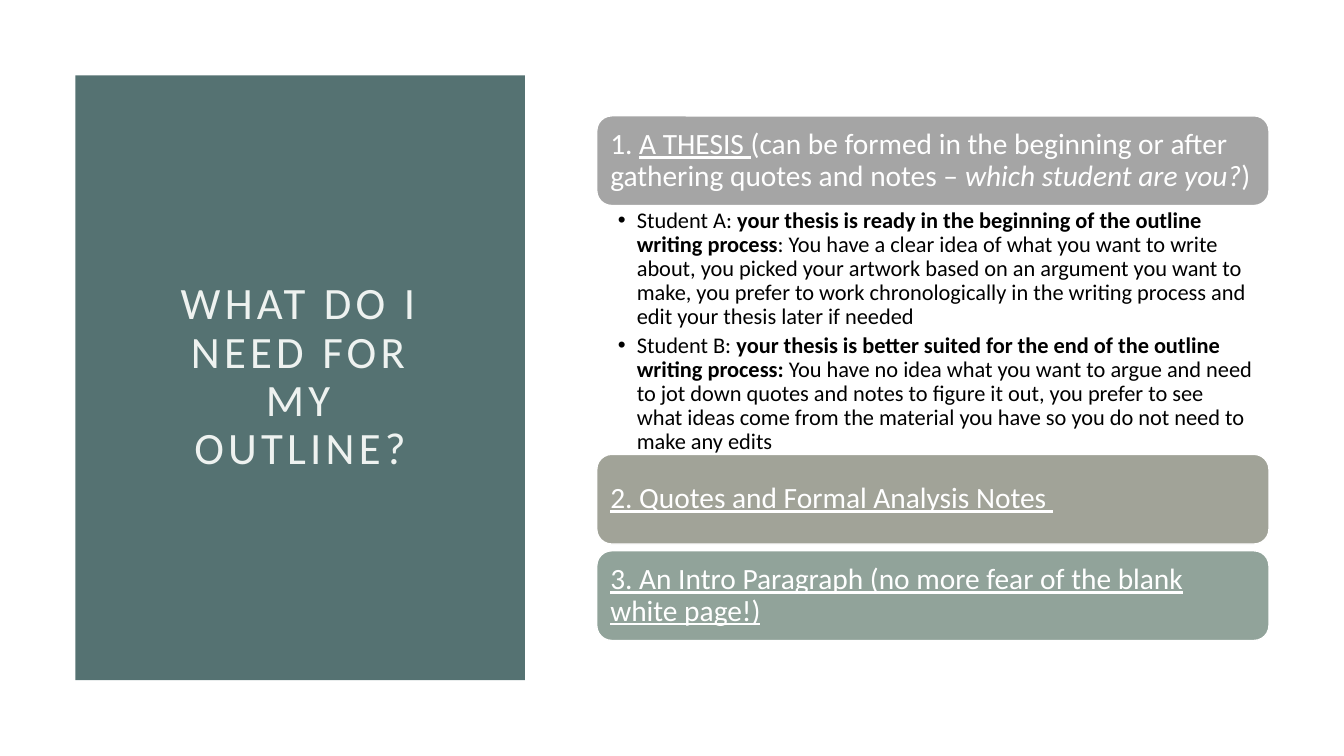
from dataclasses import dataclass

from lxml.etree import SubElement
from pptx import Presentation
from pptx.dml.color import RGBColor
from pptx.enum.shapes import MSO_SHAPE
from pptx.enum.text import MSO_ANCHOR, MSO_AUTO_SIZE, PP_ALIGN
from pptx.oxml.ns import qn
from pptx.util import Cm, Pt


@dataclass(frozen=True)
class Theme:
    font: str = "Calibri"
    panel: str = "557272"
    title: str = "EEF2F0"
    white: str = "FFFFFF"
    body: str = "000000"
    bars: tuple = ("A5A5A5", "A1A398", "91A39A")
    title_size: int = 32
    bar_size: int = 21
    body_size: int = 16


@dataclass(frozen=True)
class Box:
    left: float
    top: float
    width: float
    height: float

    def lengths(self):
        return [Cm(v) for v in (self.left, self.top, self.width, self.height)]

    def inset(self, margin):
        return Box(self.left + margin, self.top + margin,
                   self.width - 2 * margin, self.height - 2 * margin)


THEME = Theme()
TITLE = "WHAT DO I NEED FOR MY OUTLINE?"
UNDERLINE, ITALIC, BOLD = {"underline": True}, {"italic": True}, {"bold": True}

# Each step: heading spans, then bulleted paragraphs of spans
STEPS = [
    ([("1. ", {}), ("A THESIS ", UNDERLINE),
      ("(can be formed in the beginning or after gathering quotes and notes – ", {}),
      ("which student are you?", ITALIC), (")", {})],
     [[("Student A: ", {}),
       ("your thesis is ready in the beginning of the outline writing process", BOLD),
       (": You have a clear idea of what you want to write about, you picked your "
        "artwork based on an argument you want to make, you prefer to work "
        "chronologically in the writing process and edit your thesis later if needed", {})],
      [("Student B: ", {}),
       ("your thesis is better suited for the end of the outline writing process: ", BOLD),
       ("You have no idea what you want to argue and need to jot down quotes and notes "
        "to figure it out, you prefer to see what ideas come from the material you have "
        "so you do not need to make any edits", {})]]),
    ([("2. Quotes and Formal Analysis Notes ", UNDERLINE)], []),
    ([("3. An Intro Paragraph (no more fear of the blank white page!)", UNDERLINE)], []),
]


def apply(target, formats):
    for name, value in formats.items():
        setattr(target, name, value)


def add_spans(para, spans, size, color):
    para.line_spacing = 0.9
    for text, formats in spans:
        span = para.add_run()
        span.text = text
        apply(span.font, {"name": THEME.font, "size": Pt(size), **formats})
        span.font.color.rgb = RGBColor.from_string(color)


def add_block(page, kind, box, fill, line=None):
    block = page.shapes.add_shape(kind, *box.lengths())
    block.shadow.inherit = False
    block.fill.solid()
    block.fill.fore_color.rgb = RGBColor.from_string(fill)
    if line:
        block.line.color.rgb = RGBColor.from_string(line)
        block.line.width = Pt(1)
    else:
        block.line.fill.background()
    return block


def add_title_panel(page, box):
    panel = add_block(page, MSO_SHAPE.RECTANGLE, box, THEME.panel)
    title = page.shapes.title
    panel.element.addnext(title.element)  # title sits above the panel
    apply(title, dict(zip(("left", "top", "width", "height"), box.inset(1.9).lengths())))
    apply(title.text_frame, {"word_wrap": True, "auto_size": MSO_AUTO_SIZE.NONE,
                             "vertical_anchor": MSO_ANCHOR.MIDDLE})
    para = title.text_frame.paragraphs[0]
    para.alignment = PP_ALIGN.CENTER
    add_spans(para, [(TITLE, {})], THEME.title_size, THEME.title)
    para.runs[0].font._element.set("spc", "300")  # letter spacing of 3 pt


def add_bar(page, box, spans, fill):
    bar = add_block(page, MSO_SHAPE.ROUNDED_RECTANGLE, box, fill, THEME.white)
    margins = dict.fromkeys(
        ("margin_left", "margin_top", "margin_right", "margin_bottom"), Cm(0.23))
    apply(bar.text_frame, {"word_wrap": True, "vertical_anchor": MSO_ANCHOR.MIDDLE, **margins})
    para = bar.text_frame.paragraphs[0]
    para.alignment = PP_ALIGN.LEFT
    add_spans(para, spans, THEME.bar_size, THEME.white)


def add_bullets(page, box, bullets):
    frame = page.shapes.add_textbox(*box.lengths()).text_frame
    apply(frame, {"word_wrap": True, "margin_left": Cm(0.53), "margin_right": Cm(0.41),
                  "margin_top": Cm(0.08), "margin_bottom": Cm(0.08)})
    for index, spans in enumerate(bullets):
        para = frame.add_paragraph() if index else frame.paragraphs[0]
        para.space_after = Pt(3)
        add_spans(para, spans, THEME.body_size, THEME.body)
        properties = para._p.get_or_add_pPr()
        properties.set("marL", str(Cm(0.48)))
        properties.set("indent", str(-Cm(0.48)))
        SubElement(properties, qn("a:buFont")).set("typeface", "Arial")
        SubElement(properties, qn("a:buChar")).set("char", "•")


def add_steps(page, box):
    bar_height, bullets_height, gap = 2.26, 6.27, 0.17
    top = box.top
    for (heading, bullets), fill in zip(STEPS, THEME.bars):
        add_bar(page, Box(box.left, top, box.width, bar_height), heading, fill)
        top += bar_height
        if bullets:
            add_bullets(page, Box(box.left, top, box.width, bullets_height), bullets)
            top += bullets_height
        else:
            top += gap


def main():
    deck = Presentation()
    apply(deck, {"slide_width": Cm(33.87), "slide_height": Cm(19.05)})
    page = deck.slides.add_slide(deck.slide_layouts.get_by_name("Title Only"))
    # Left: title panel; right: outline steps
    add_title_panel(page, Box(1.9, 1.9, 11.33, 15.24))
    add_steps(page, Box(15.04, 2.92, 16.94, 13.22))
    deck.save("out.pptx")


if __name__ == "__main__":
    main()
